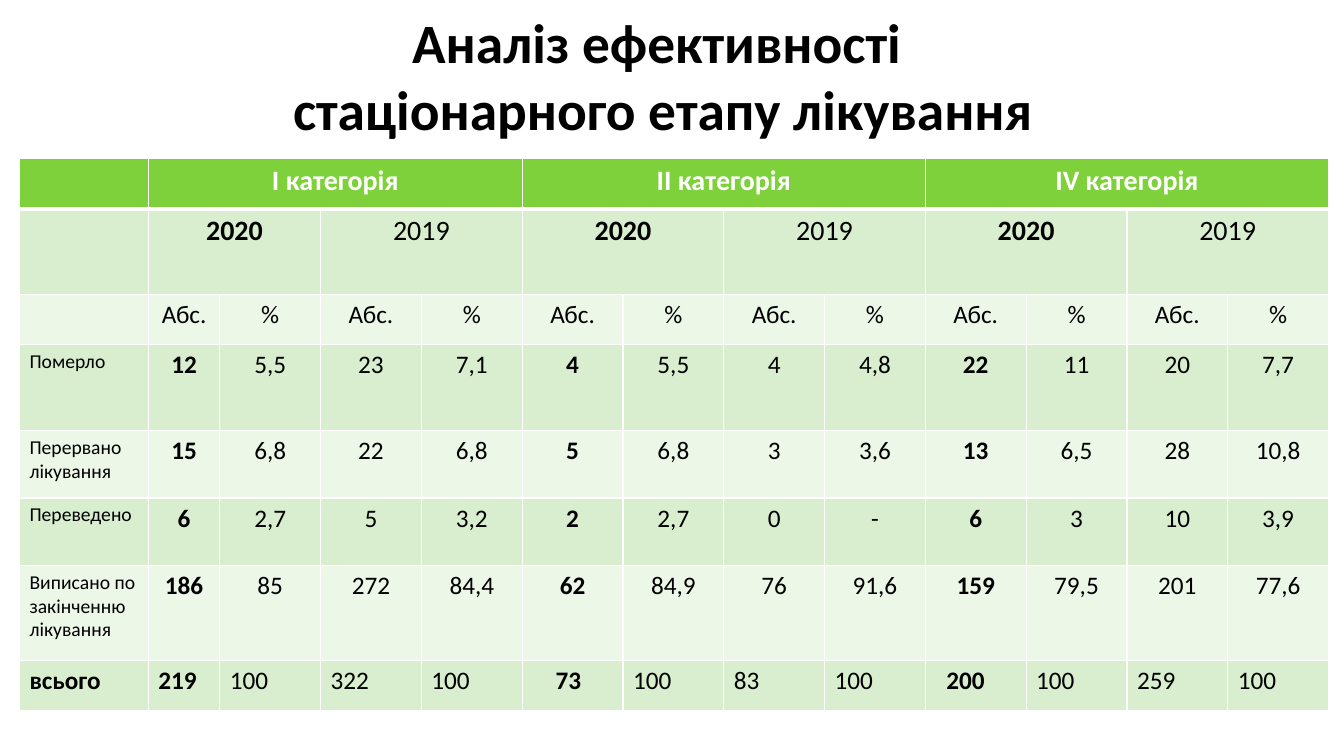
from typing import NamedTuple

from lxml import etree
from pptx import Presentation
from pptx import util as u
from pptx.dml.color import RGBColor
from pptx.enum import text
from pptx.oxml import ns

FONT = "Calibri"
COLORS = {
    "black": "000000",
    "white": "FFFFFF",
    "header": "7FD13B",
    "band_dark": "D8EECE",
    "band_light": "ECF7E8",
}
CENTER, LEFT = text.PP_ALIGN.CENTER, text.PP_ALIGN.LEFT


class Style(NamedTuple):
    size: float
    bold: bool = False
    color: str = "black"
    align: int = CENTER


class Outcome(NamedTuple):
    label: str
    values: str
    height: float


TITLE = Style(39.6, bold=True)
CATEGORY = Style(20, bold=True, color="white")
LABEL = Style(14, align=LEFT)
VALUE = Style(18)

CATEGORIES = ["І категорія", "ІІ категорія", "ІV категорія"]
YEARS = ["2020", "2019"]
MEASURES = ["Абс.", "%"]
OUTCOMES = [
    Outcome("Померло", "12 5,5 23 7,1 4 5,5 4 4,8 22 11 20 7,7", 2.16),
    Outcome("Перервано лікування", "15 6,8 22 6,8 5 6,8 3 3,6 13 6,5 28 10,8", 1.7),
    Outcome("Переведено", "6 2,7 5 3,2 2 2,7 0 - 6 3 10 3,9", 1.7),
    Outcome("Виписано по закінченню лікування",
            "186 85 272 84,4 62 84,9 76 91,6 159 79,5 201 77,6", 2.39),
    Outcome("всього", "219 100 322 100 73 100 83 100 200 100 259 100", 1.27),
]
TOTAL_INDENTS = {5: 0.84, 9: 0.53}  # left margins of two totals, by column

COL_WIDTHS = [3.25, 1.8] + [2.54] * 11
ROW_HEIGHTS = [1.27, 2.16, 1.27] + [o.height for o in OUTCOMES]
YEAR_SPAN = len(MEASURES)
CATEGORY_SPAN = YEAR_SPAN * len(YEARS)


def add_run(p, words: str, style: Style) -> None:
    p.alignment = style.align
    r = p.add_run()
    r.text = words
    r.font.name = FONT
    r.font.size = u.Pt(style.size)
    r.font.bold = style.bold
    r.font.color.rgb = RGBColor.from_string(COLORS[style.color])


def write(cell, words: str, style: Style) -> None:
    add_run(cell.text_frame.paragraphs[0], words, style)


def format_cell(cell, fill: str, edges: dict[str, float]) -> None:
    tc_pr = cell._tc.get_or_add_tcPr()
    for side, width in edges.items():
        ln = etree.SubElement(tc_pr, ns.qn(f"a:ln{side}"), w=str(u.Pt(width)))
        solid = etree.SubElement(ln, ns.qn("a:solidFill"))
        etree.SubElement(solid, ns.qn("a:srgbClr"), val=COLORS["white"])
    cell.fill.solid()
    cell.fill.fore_color.rgb = RGBColor.from_string(COLORS[fill])


def add_title(s) -> None:
    box = s.shapes.add_textbox(u.Cm(1.47), u.Cm(0.3), u.Cm(30.48), u.Cm(3.18))
    tf = box.text_frame
    tf.word_wrap = True
    tf.vertical_anchor = text.MSO_ANCHOR.MIDDLE
    p = tf.paragraphs[0]
    add_run(p, "Аналіз ефективності ", TITLE)
    p.add_line_break()
    add_run(p, "стаціонарного етапу лікування", TITLE)


def add_grid(s):
    frame = s.shapes.add_table(
        len(ROW_HEIGHTS), len(COL_WIDTHS), u.Cm(0.49), u.Cm(3.99),
        u.Cm(sum(COL_WIDTHS)), u.Cm(sum(ROW_HEIGHTS)))
    table = frame.table
    table.first_row = table.horz_banding = False
    for column, width in zip(table.columns, COL_WIDTHS):
        column.width = u.Cm(width)
    for i, (row, height) in enumerate(zip(table.rows, ROW_HEIGHTS)):
        row.height = u.Cm(height)
        fill = "header" if i == 0 else "band_dark" if i % 2 else "band_light"
        edges = {"L": 1, "R": 1, "T": 3 if i == 1 else 1, "B": 3 if i == 0 else 1}
        for cell in row.cells:
            format_cell(cell, fill, edges)
    return table


def fill_headings(table) -> None:
    for c, category in enumerate(CATEGORIES):
        first = 1 + c * CATEGORY_SPAN
        table.cell(0, first).merge(table.cell(0, first + CATEGORY_SPAN - 1))
        write(table.cell(0, first), category, CATEGORY)
        for y, year in enumerate(YEARS):
            col = first + y * YEAR_SPAN
            table.cell(1, col).merge(table.cell(1, col + YEAR_SPAN - 1))
            write(table.cell(1, col), year, Style(20, bold=y == 0))
            for m, measure in enumerate(MEASURES):
                write(table.cell(2, col + m), measure, VALUE)


def fill_outcomes(table) -> None:
    for i, outcome in enumerate(OUTCOMES, start=3):
        is_total = outcome is OUTCOMES[-1]
        label = VALUE._replace(bold=True, align=LEFT) if is_total else LABEL
        write(table.cell(i, 0), outcome.label, label)
        for col, value in enumerate(outcome.values.split(), start=1):
            style = VALUE._replace(bold=col % CATEGORY_SPAN == 1,
                                   align=LEFT if is_total else CENTER)
            write(table.cell(i, col), value, style)
    for col, indent in TOTAL_INDENTS.items():
        table.cell(len(ROW_HEIGHTS) - 1, col).margin_left = u.Cm(indent)


def main() -> None:
    prs = Presentation()
    prs.slide_width, prs.slide_height = u.Cm(33.87), u.Cm(19.05)
    s = prs.slides.add_slide(prs.slide_layouts[6])

    # Title
    add_title(s)

    # Table of treatment outcomes
    table = add_grid(s)
    fill_headings(table)
    fill_outcomes(table)

    prs.save("out.pptx")


if __name__ == "__main__":
    main()
